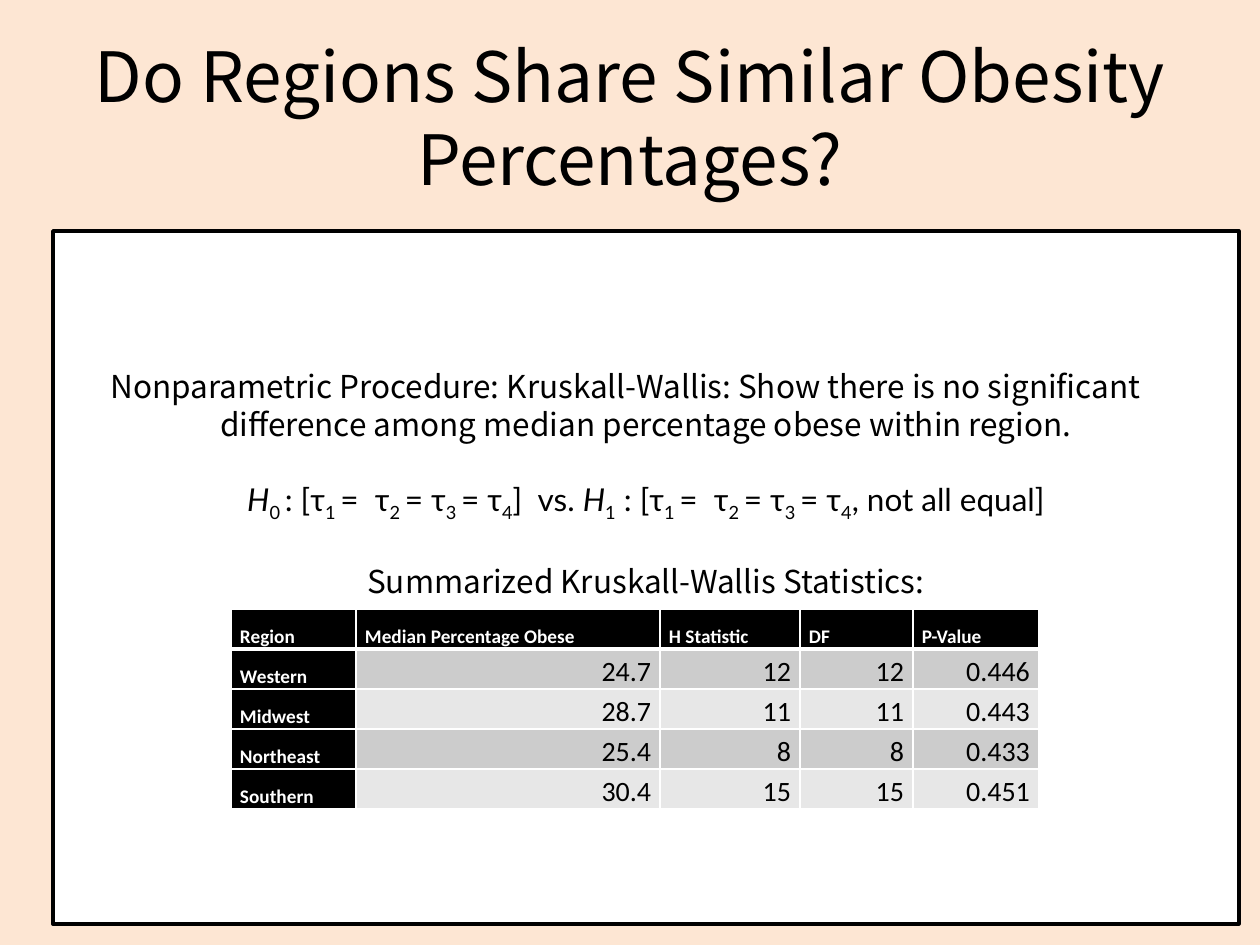
import pptx
import pptx.dml.color
import pptx.enum.shapes
import pptx.enum.text
import pptx.oxml
import pptx.oxml.ns
import pptx.util

EMU_PER_PX = 914400 // 126
COLORS = {
    "background": "FDE6D3",
    "black": "000000",
    "white": "FFFFFF",
    "dark_band": "CCCCCC",
    "light_band": "E7E7E7",
}
HEADING_FONT = "Noto Sans CJK JP"
FORMULA_FONT = "Lato"
TABLE_FONT = "Calibri"
ALIGN = pptx.enum.text.PP_ALIGN
ANCHOR = pptx.enum.text.MSO_ANCHOR

TAUS = [
    ("τ", "plain"), ("1 ", "subscript"),
    ("=  τ", "plain"), ("2 ", "subscript"),
    ("= τ", "plain"), ("3 ", "subscript"),
    ("= τ", "plain"), ("4", "subscript"),
]
HYPOTHESES = [
    ("H", "italic"), ("0 ", "subscript"), (": [", "plain"), *TAUS,
    ("]  vs. ", "plain"),
    ("H", "italic"), ("1", "subscript"), (" : [", "plain"), *TAUS,
    (", not all equal]", "plain"),
]
PROCEDURE = (
    "Nonparametric Procedure: Kruskall-Wallis: Show there is no significant "
    "\tdifference among median percentage obese within region."
)
STATISTICS = [
    ["Region", "Median Percentage Obese", "H Statistic", "DF", "P-Value"],
    ["Western", "24.7", "12", "12", "0.446"],
    ["Midwest", "28.7", "11", "11", "0.443"],
    ["Northeast", "25.4", "8", "8", "0.433"],
    ["Southern", "30.4", "15", "15", "0.451"],
]


def px(length):
    return pptx.util.Emu(length * EMU_PER_PX)


def color(name):
    return pptx.dml.color.RGBColor.from_string(COLORS[name])


class SlideBuilder:
    def __init__(self, slide):
        self.slide = slide

    def background(self, name):
        fill = self.slide.background.fill
        fill.solid()
        fill.fore_color.rgb = color(name)

    def style_run(self, run, font, size, name="black", style="plain"):
        run.font.name = font
        run.font.size = pptx.util.Pt(size)
        run.font.color.rgb = color(name)
        run.font.bold = style == "bold"
        run.font.italic = style == "italic"
        if style == "subscript":
            run._r.get_or_add_rPr().set("baseline", "-25000")

    def paragraph(self, paragraph, parts, font, size, space_before=0):
        paragraph.alignment = ALIGN.CENTER
        paragraph.space_before = pptx.util.Pt(space_before)
        for text, style in parts:
            run = paragraph.add_run()
            run.text = text
            self.style_run(run, font, size, style=style)

    def title(self, text, left, top, width, height):
        box = self.slide.shapes.add_textbox(px(left), px(top), px(width), px(height))
        frame = box.text_frame
        frame.word_wrap = True
        frame.vertical_anchor = ANCHOR.MIDDLE
        self.paragraph(frame.paragraphs[0], [(text, "plain")], HEADING_FONT, 39.6)

    def panel(self, paragraphs, left, top, width, height, text_offset):
        shape = self.slide.shapes.add_shape(
            pptx.enum.shapes.MSO_SHAPE.RECTANGLE,
            px(left), px(top), px(width), px(height))
        shape.shadow.inherit = False
        shape.fill.solid()
        shape.fill.fore_color.rgb = color("white")
        shape.line.color.rgb = color("black")
        shape.line.width = pptx.util.Pt(2)
        frame = shape.text_frame
        frame.word_wrap = True
        frame.vertical_anchor = ANCHOR.TOP
        frame.margin_top = px(text_offset)
        for index, (parts, font, space_before) in enumerate(paragraphs):
            paragraph = frame.add_paragraph() if index else frame.paragraphs[0]
            self.paragraph(paragraph, parts, font, 18, space_before)

    def borders(self, cell, top_width, bottom_width):
        properties = cell._tc.get_or_add_tcPr()
        widths = {"lnL": 1, "lnR": 1, "lnT": top_width, "lnB": bottom_width}
        for index, (side, width) in enumerate(widths.items()):
            border = pptx.oxml.parse_xml(
                f'<a:{side} {pptx.oxml.ns.nsdecls("a")} w="{width * 12700}">'
                f'<a:solidFill><a:srgbClr val="{COLORS["white"]}"/></a:solidFill>'
                f'</a:{side}>')
            properties.insert(index, border)

    def table_cell(self, cell, text, row, column):
        is_label = row == 0 or column == 0
        band = "dark_band" if row % 2 else "light_band"
        cell.fill.solid()
        cell.fill.fore_color.rgb = color("black" if is_label else band)
        cell.margin_left = cell.margin_right = px(9)
        cell.margin_top = cell.margin_bottom = 0
        cell.vertical_anchor = ANCHOR.BOTTOM
        cell.text_frame.text = text
        paragraph = cell.text_frame.paragraphs[0]
        paragraph.line_spacing = 1.15
        paragraph.alignment = ALIGN.LEFT if is_label else ALIGN.RIGHT
        run = paragraph.runs[0]
        if is_label:
            self.style_run(run, TABLE_FONT, 11, "white", "bold")
        else:
            self.style_run(run, TABLE_FONT, 16)
        self.borders(cell, 3 if row == 1 else 1, 3 if row == 0 else 1)

    def table(self, rows, left, top, column_widths, row_height):
        table = self.slide.shapes.add_table(
            len(rows), len(column_widths), px(left), px(top),
            px(sum(column_widths)), px(row_height * len(rows))).table
        table.first_row = table.horz_banding = False
        for column, width in zip(table.columns, column_widths):
            column.width = px(width)
        for row, texts in enumerate(rows):
            table.rows[row].height = px(row_height)
            for column, text in enumerate(texts):
                self.table_cell(table.cell(row, column), text, row, column)


def main():
    presentation = pptx.Presentation()
    presentation.slide_width = px(1260)
    presentation.slide_height = px(945)
    builder = SlideBuilder(presentation.slides.add_slide(presentation.slide_layouts[6]))
    builder.background("background")
    builder.title("Do Regions Share Similar Obesity Percentages?", 63, 38, 1134, 157)
    builder.panel([
        ([(PROCEDURE, "plain")], HEADING_FONT, 0),
        (HYPOTHESES, FORMULA_FONT, 21.5),
        ([("Summarized Kruskall-Wallis Statistics:", "plain")], HEADING_FONT, 22),
    ], 53, 231, 1186, 693, text_offset=136)
    builder.table(STATISTICS, 231, 609, [125, 304, 140, 113, 126], 40)
    presentation.save("out.pptx")


if __name__ == "__main__":
    main()
